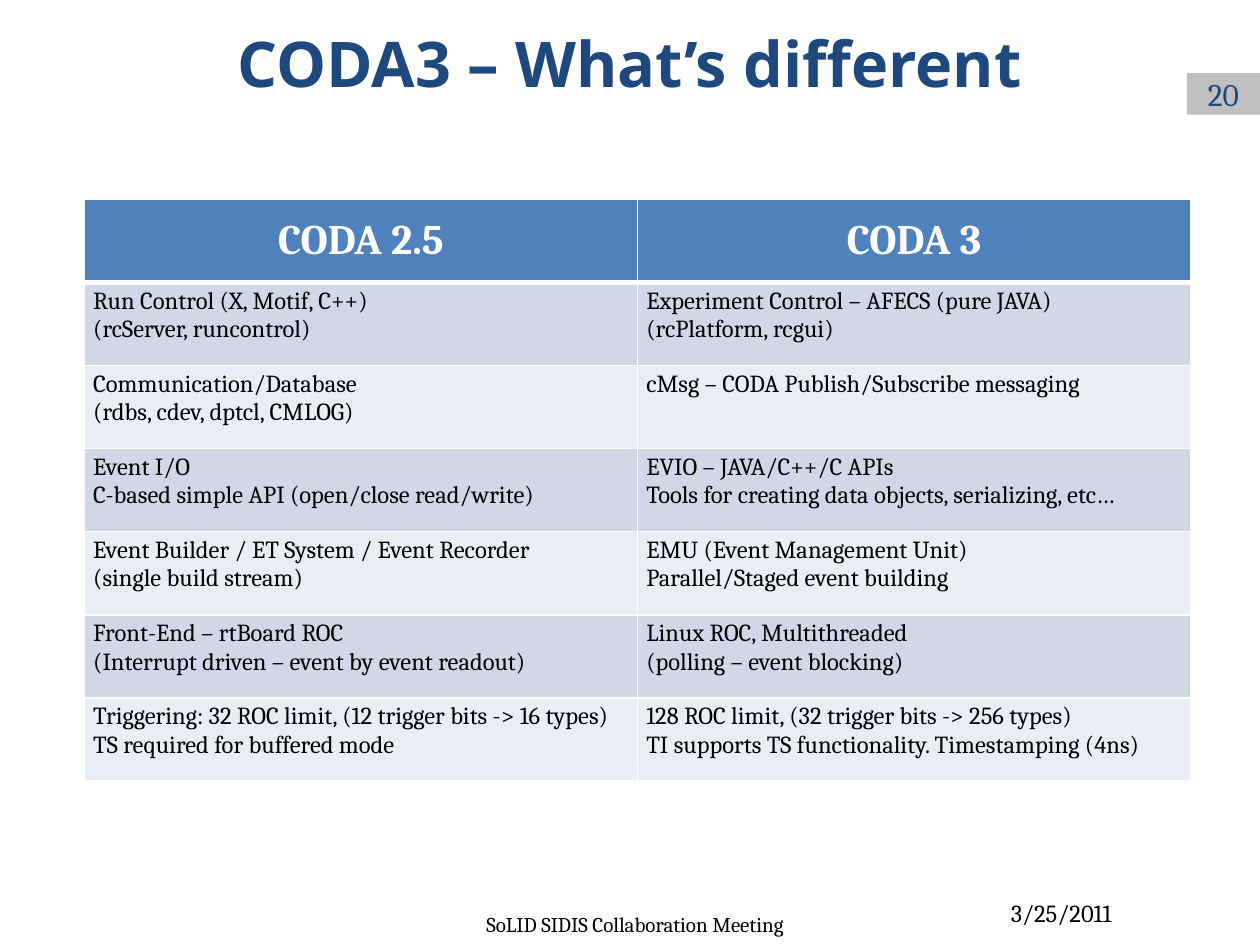
from typing import NamedTuple

from lxml.etree import SubElement
from pptx import Presentation
from pptx.dml.color import RGBColor
from pptx.enum.shapes import MSO_SHAPE
from pptx.enum.text import MSO_ANCHOR, PP_ALIGN
from pptx.oxml.ns import qn
from pptx.util import Inches, Pt

COLORS = {
    "navy": "1F497D",
    "gray": "BFBFBF",
    "header": "4F81BD",
    "odd_row": "D0D8E8",
    "even_row": "E9EDF4",
    "white": "FFFFFF",
    "black": "000000",
}
BODY_FONT = "Cambria"
TITLE_FONT = "Open Sans"


class Style(NamedTuple):
    size: int
    color: str = "black"
    align: PP_ALIGN = PP_ALIGN.LEFT
    anchor: MSO_ANCHOR = MSO_ANCHOR.MIDDLE
    bold: bool = False
    font: str = BODY_FONT


class Label(NamedTuple):
    text: str
    left: float
    top: float
    width: float
    height: float
    style: Style


LABELS = [
    Label("CODA3 – What’s different", 0.75, 0.08, 8.5, 0.83,
          Style(36, "navy", PP_ALIGN.CENTER, bold=True, font=TITLE_FONT)),
    Label("3/25/2011", 7.5, 7.08, 1.42, 0.32, Style(14, align=PP_ALIGN.RIGHT)),
    Label("SoLID SIDIS Collaboration Meeting", 2.58, 7.17, 4.92, 0.33,
          Style(12, align=PP_ALIGN.CENTER)),
]
PAGE_NUMBER = Label("20", 9.42, 0.58, 0.58, 0.33, Style(18, "navy", PP_ALIGN.CENTER))

HEADER_STYLE = Style(24, "white", PP_ALIGN.CENTER, bold=True)
CELL_STYLE = Style(14, anchor=MSO_ANCHOR.TOP)
COMPARISON = [
    ("CODA 2.5", "CODA 3"),
    ("Run Control (X, Motif, C++)\n(rcServer, runcontrol)",
     "Experiment Control – AFECS (pure JAVA)\n(rcPlatform, rcgui)"),
    ("Communication/Database\n(rdbs, cdev, dptcl, CMLOG)",
     "cMsg – CODA Publish/Subscribe messaging"),
    ("Event I/O\nC-based simple API (open/close read/write)",
     "EVIO – JAVA/C++/C APIs\nTools for creating data objects, serializing, etc…"),
    ("Event Builder / ET System / Event Recorder\n(single build stream)",
     "EMU (Event Management Unit)\nParallel/Staged event building"),
    ("Front-End – rtBoard ROC\n(Interrupt driven – event by event readout)",
     "Linux ROC, Multithreaded\n(polling – event blocking)"),
    ("Triggering: 32 ROC limit, (12 trigger bits -> 16 types)\n"
     "TS required for buffered mode",
     "128 ROC limit, (32 trigger bits -> 256 types)\n"
     "TI supports TS functionality. Timestamping (4ns)"),
]


def rgb(name: str) -> RGBColor:
    return RGBColor.from_string(COLORS[name])


def write_text(tf, text: str, style: Style) -> None:
    tf.text = text
    for p in tf.paragraphs:
        p.alignment = style.align
        for r in p.runs:
            r.font.size = Pt(style.size)
            r.font.name = style.font
            r.font.bold = style.bold
            r.font.color.rgb = rgb(style.color)


def box(label: Label) -> tuple:
    return tuple(Inches(v) for v in label[1:5])


def add_label(slide, label: Label) -> None:
    tf = slide.shapes.add_textbox(*box(label)).text_frame
    tf.word_wrap = True
    tf.vertical_anchor = label.style.anchor
    write_text(tf, label.text, label.style)


def add_page_number(slide, label: Label) -> None:
    sp = slide.shapes.add_shape(MSO_SHAPE.RECTANGLE, *box(label))
    sp.shadow.inherit = False
    sp.fill.solid()
    sp.fill.fore_color.rgb = rgb("gray")
    sp.line.fill.background()
    tf = sp.text_frame
    tf.margin_top = tf.margin_bottom = 0
    tf.vertical_anchor = label.style.anchor
    write_text(tf, label.text, label.style)


def set_borders(cell, top: int, bottom: int) -> None:
    """Draw white cell borders; top and bottom widths are in points."""
    tc_pr = cell._tc.get_or_add_tcPr()
    for tag, width in (("lnL", 1), ("lnR", 1), ("lnT", top), ("lnB", bottom)):
        ln = SubElement(tc_pr, qn(f"a:{tag}"), w=str(Pt(width)))
        fill = SubElement(ln, qn("a:solidFill"))
        SubElement(fill, qn("a:srgbClr"), val=COLORS["white"])


def format_cell(cell, text: str, row: int) -> None:
    style = HEADER_STYLE if row == 0 else CELL_STYLE
    set_borders(cell, top=3 if row == 1 else 1, bottom=3 if row == 0 else 1)
    cell.fill.solid()
    band = "odd_row" if row % 2 else "even_row"
    cell.fill.fore_color.rgb = rgb("header" if row == 0 else band)
    cell.margin_left = cell.margin_right = Inches(0.07)
    cell.margin_top = cell.margin_bottom = Inches(0.04)
    cell.vertical_anchor = style.anchor
    write_text(cell.text_frame, text, style)


def add_comparison(slide) -> None:
    row_height = Inches(0.66)
    table = slide.shapes.add_table(
        len(COMPARISON), 2, Inches(0.67), Inches(1.58),
        Inches(8.78), row_height * len(COMPARISON)).table
    for i, texts in enumerate(COMPARISON):
        table.rows[i].height = row_height
        for j, text in enumerate(texts):
            format_cell(table.cell(i, j), text, i)


def main() -> None:
    prs = Presentation()
    prs.slide_width, prs.slide_height = Inches(10), Inches(7.5)
    slide = prs.slides.add_slide(prs.slide_layouts[6])
    add_page_number(slide, PAGE_NUMBER)
    add_comparison(slide)
    for label in LABELS:
        add_label(slide, label)
    prs.save("out.pptx")


if __name__ == "__main__":
    main()
